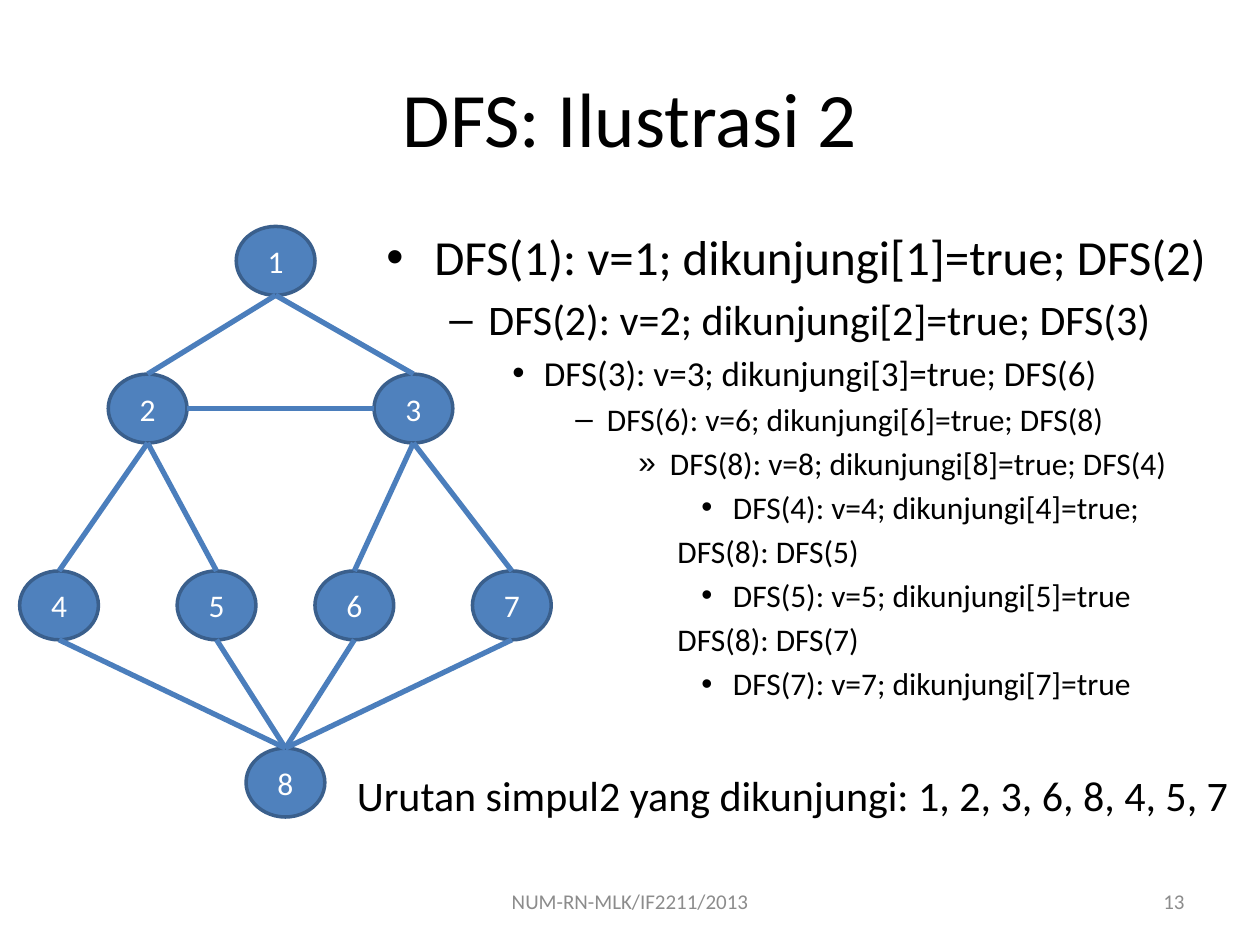
from dataclasses import dataclass

from lxml import etree
from pptx import Presentation
from pptx.dml.color import RGBColor
from pptx.enum.shapes import MSO_CONNECTOR, MSO_SHAPE
from pptx.enum.text import MSO_ANCHOR, MSO_AUTO_SIZE, PP_ALIGN
from pptx.oxml.ns import qn
from pptx.util import Inches, Pt

LEFT, CENTER, RIGHT = PP_ALIGN.LEFT, PP_ALIGN.CENTER, PP_ALIGN.RIGHT
TOP, MIDDLE = MSO_ANCHOR.TOP, MSO_ANCHOR.MIDDLE
FIT_SHAPE = MSO_AUTO_SIZE.SHAPE_TO_FIT_TEXT
OVAL, STRAIGHT = MSO_SHAPE.OVAL, MSO_CONNECTOR.STRAIGHT

FONT = "Calibri"
COLORS = {"text": "000000", "muted": "8C8C8C", "node": "4F81BD",
          "outline": "3A5F8C", "edge": "4B7EBC", "label": "FFFFFF"}

# The slide is a grid of 64 columns by 48 rows of square cells.
WIDTH, HEIGHT = Inches(10), Inches(7.5)
CELL = WIDTH / 64
NODE_COLS, NODE_ROWS = 4, 3.5


@dataclass(frozen=True)
class Area:
    col: float
    row: float
    cols: float
    rows: float

    def emu(self) -> list[int]:
        return [cells(n) for n in (self.col, self.row, self.cols, self.rows)]


@dataclass(frozen=True)
class Caption:
    text: str
    area: Area
    size: int
    color: str
    align: PP_ALIGN
    anchor: MSO_ANCHOR = MIDDLE
    wrap: bool = True


@dataclass(frozen=True)
class Node:
    col: float
    row: float

    def side(self, name: str) -> tuple[int, int]:
        """Middle point of the named side of the node."""
        x, y = {"top": (0.5, 0), "left": (0, 0.5),
                "bottom": (0.5, 1), "right": (1, 0.5)}[name]
        return (cells(self.col + x * NODE_COLS), cells(self.row + y * NODE_ROWS))


@dataclass(frozen=True)
class Level:
    size: int
    margin: float
    hanging: float
    bullet: str


@dataclass(frozen=True)
class Call:
    level: int
    text: str
    resumed: bool = False


CAPTIONS = [
    Caption("DFS: Ilustrasi 2", Area(3.2, 1.92, 57.6, 8), 44, "text", CENTER),
    Caption("13", Area(45.87, 44.48, 14.93, 2.56), 12, "muted", RIGHT),
    Caption("NUM-RN-MLK/IF2211/2013", Area(21.87, 44.48, 20.27, 2.56), 12,
            "muted", CENTER),
    Caption("Urutan simpul2 yang dikunjungi: 1, 2, 3, 6, 8, 4, 5, 7",
            Area(17.5, 38.75, 47, 3.2), 24, "text", LEFT, TOP, wrap=False),
]

TRACE_AREA = Area(19, 11.2, 48, 31.68)
LEVELS = [Level(28, 0.38, 0.38, "•"), Level(24, 0.81, 0.31, "–"),
          Level(20, 1.25, 0.25, "•"), Level(18, 1.75, 0.25, "–"),
          Level(18, 2.25, 0.25, "»"), Level(18, 2.75, 0.25, "•")]
RESUMED_SHIFT = 0.06
TRACE = [
    Call(0, "DFS(1): v=1; dikunjungi[1]=true; DFS(2)"),
    Call(1, "DFS(2): v=2; dikunjungi[2]=true; DFS(3)"),
    Call(2, "DFS(3): v=3; dikunjungi[3]=true; DFS(6)"),
    Call(3, "DFS(6): v=6; dikunjungi[6]=true; DFS(8)"),
    Call(4, "DFS(8): v=8; dikunjungi[8]=true; DFS(4)"),
    Call(5, "DFS(4): v=4; dikunjungi[4]=true;"),
    Call(4, "DFS(8): DFS(5)", resumed=True),
    Call(5, "DFS(5): v=5; dikunjungi[5]=true"),
    Call(4, "DFS(8): DFS(7)", resumed=True),
    Call(5, "DFS(7): v=7; dikunjungi[7]=true"),
]

NODES = {1: Node(12, 11.5), 2: Node(5.5, 19), 3: Node(19, 19),
         4: Node(1, 29), 5: Node(9, 29), 6: Node(16, 29), 7: Node(24, 29),
         8: Node(12.5, 38)}
DOWNWARD_EDGES = [(2, 4), (2, 5), (3, 6), (3, 7), (1, 2), (1, 3),
                  (6, 8), (7, 8), (4, 8), (5, 8)]
SIDEWAYS_EDGES = [(2, 3)]


def cells(count: float) -> int:
    return round(count * CELL)


def rgb(name: str) -> RGBColor:
    return RGBColor.from_string(COLORS[name])


def add_run(paragraph, text: str, size: int, color: str) -> None:
    run = paragraph.add_run()
    run.text = text
    run.font.name = FONT
    run.font.size = Pt(size)
    run.font.color.rgb = rgb(color)


def draw_caption(slide, caption: Caption) -> None:
    frame = slide.shapes.add_textbox(*caption.area.emu()).text_frame
    frame.word_wrap = caption.wrap
    frame.vertical_anchor = caption.anchor
    if not caption.wrap:
        frame.auto_size = FIT_SHAPE
    paragraph = frame.paragraphs[0]
    paragraph.alignment = caption.align
    add_run(paragraph, caption.text, caption.size, caption.color)


def format_call(paragraph, call: Call) -> None:
    """Set level, indent, proportional spacing and bullet of a trace line."""
    level = LEVELS[call.level]
    paragraph.level = call.level
    margin = level.margin + (RESUMED_SHIFT if call.resumed else 0)
    hanging = 0 if call.resumed else level.hanging
    props = paragraph._p.get_or_add_pPr()
    props.set("marL", str(Inches(margin)))
    props.set("indent", str(-Inches(hanging)))
    spacing = etree.SubElement(props, qn("a:spcBef"))
    etree.SubElement(spacing, qn("a:spcPct")).set("val", "20000")
    if call.resumed:
        etree.SubElement(props, qn("a:buNone"))
    else:
        etree.SubElement(props, qn("a:buFont")).set("typeface", "Arial")
        etree.SubElement(props, qn("a:buChar")).set("char", level.bullet)


def draw_trace(slide) -> None:
    frame = slide.shapes.add_textbox(*TRACE_AREA.emu()).text_frame
    frame.word_wrap = True
    for index, call in enumerate(TRACE):
        paragraph = frame.add_paragraph() if index else frame.paragraphs[0]
        format_call(paragraph, call)
        add_run(paragraph, call.text, LEVELS[call.level].size, "text")


def draw_node(slide, number: int, node: Node) -> None:
    area = Area(node.col, node.row, NODE_COLS, NODE_ROWS)
    oval = slide.shapes.add_shape(OVAL, *area.emu())
    oval.shadow.inherit = False
    oval.fill.solid()
    oval.fill.fore_color.rgb = rgb("node")
    oval.line.color.rgb = rgb("outline")
    oval.line.width = Pt(2)
    oval.text_frame.vertical_anchor = MIDDLE
    paragraph = oval.text_frame.paragraphs[0]
    paragraph.alignment = CENTER
    add_run(paragraph, str(number), 18, "label")


def draw_edge(slide, start: tuple[int, int], end: tuple[int, int]) -> None:
    edge = slide.shapes.add_connector(STRAIGHT, *start, *end)
    edge.line.color.rgb = rgb("edge")
    edge.line.width = Pt(3)
    etree.SubElement(edge._element.spPr, qn("a:effectLst"))


def main() -> None:
    deck = Presentation()
    deck.slide_width, deck.slide_height = WIDTH, HEIGHT
    slide = deck.slides.add_slide(deck.slide_layouts[6])
    draw_trace(slide)
    for number, node in NODES.items():
        draw_node(slide, number, node)
    for upper, lower in DOWNWARD_EDGES:
        draw_edge(slide, NODES[upper].side("bottom"), NODES[lower].side("top"))
    for first, second in SIDEWAYS_EDGES:
        draw_edge(slide, NODES[first].side("right"), NODES[second].side("left"))
    for caption in CAPTIONS:
        draw_caption(slide, caption)
    deck.save("out.pptx")


if __name__ == "__main__":
    main()
